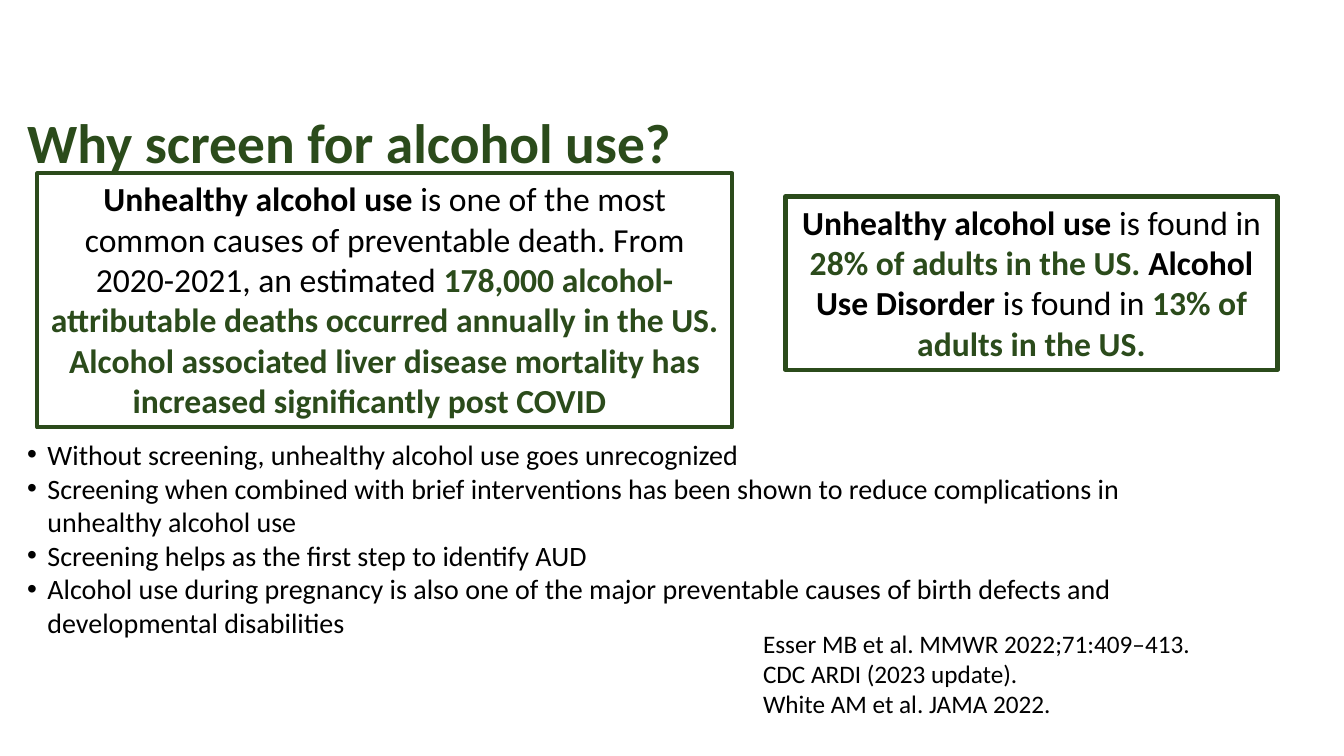
from lxml import etree
from pptx import Presentation
from pptx.dml.color import RGBColor
from pptx.enum.shapes import MSO_SHAPE
from pptx.enum.text import MSO_ANCHOR, MSO_AUTO_SIZE, PP_ALIGN
from pptx.oxml.ns import qn
from pptx.util import Emu, Pt

RECTANGLE = MSO_SHAPE.RECTANGLE
TOP, MIDDLE = MSO_ANCHOR.TOP, MSO_ANCHOR.MIDDLE
LEFT, CENTER = PP_ALIGN.LEFT, PP_ALIGN.CENTER
NO_AUTOFIT = MSO_AUTO_SIZE.NONE

EMU_PER_PX = 9144
FONT = "Calibri"
COLORS = {"green": "2B4B1B", "black": "000000"}
PLAIN = ("black", False)
STRONG = ("black", True)
ACCENT = ("green", True)


def px(length):
    return Emu(length * EMU_PER_PX)


def color(name):
    return RGBColor.from_string(COLORS[name])


class SlideBuilder:
    def __init__(self, presentation):
        self.slide = presentation.slides.add_slide(presentation.slide_layouts[1])

    def place(self, shape, box):
        shape.left, shape.top, shape.width, shape.height = map(px, box)

    def add_text(self, shape, paragraphs, size, align=LEFT, anchor=TOP, spacing=1.0, indent=0):
        frame = shape.text_frame
        frame.word_wrap = True
        frame.auto_size = NO_AUTOFIT
        frame.vertical_anchor = anchor
        for index, runs in enumerate(paragraphs):
            paragraph = frame.add_paragraph() if index else frame.paragraphs[0]
            if indent:
                self.add_bullet(paragraph, indent)
            paragraph.alignment = align
            paragraph.line_spacing = spacing
            paragraph.space_before = paragraph.space_after = Pt(0)
            for text, (color_name, bold) in runs:
                run = paragraph.add_run()
                run.text = text
                run.font.name = FONT
                run.font.size = Pt(size)
                run.font.bold = bold
                run.font.color.rgb = color(color_name)

    def add_bullet(self, paragraph, indent):
        properties = paragraph._p.get_or_add_pPr()
        properties.set("marL", str(px(indent)))
        properties.set("indent", str(px(-indent)))
        etree.SubElement(properties, qn("a:buFont")).set("typeface", "Arial")
        etree.SubElement(properties, qn("a:buChar")).set("char", "•")

    def title(self, box, text):
        shape = self.slide.shapes.title
        self.place(shape, box)
        self.add_text(shape, [[(text, ACCENT)]], 39.6, anchor=MIDDLE, spacing=0.9)

    def bullets(self, box, items):
        shape = self.slide.placeholders[1]
        self.place(shape, box)
        self.add_text(shape, [[(item, PLAIN)] for item in items], 20, indent=20)

    def callout(self, box, runs):
        shape = self.slide.shapes.add_shape(RECTANGLE, *map(px, box))
        shape.shadow.inherit = False
        shape.fill.background()
        shape.line.color.rgb = color("green")
        shape.line.width = Pt(3)
        self.add_text(shape, [runs], 24, align=CENTER)

    def references(self, box, lines):
        shape = self.slide.shapes.add_textbox(*map(px, box))
        self.add_text(shape, [[(line, PLAIN)] for line in lines], 18)


def main():
    presentation = Presentation()
    presentation.slide_width, presentation.slide_height = px(1333), px(750)
    builder = SlideBuilder(presentation)

    builder.title((17, 112, 1289, 65), "Why screen for alcohol use?")
    builder.bullets((17, 429, 1198, 246), [
        "Without screening, unhealthy alcohol use goes unrecognized",
        "Screening when combined with brief interventions has been shown to reduce "
        "complications in unhealthy alcohol use",
        "Screening helps as the first step to identify AUD",
        "Alcohol use during pregnancy is also one of the major preventable causes of "
        "birth defects and developmental disabilities",
    ])
    builder.callout((37, 172, 689, 252), [
        ("Unhealthy alcohol use ", STRONG),
        ("is one of the most common causes of preventable death. "
         "From 2020-2021, an estimated ", PLAIN),
        ("178,000 alcohol-attributable deaths occurred annually in the US. "
         "Alcohol associated liver disease mortality has increased significantly "
         "post COVID\t", ACCENT),
    ])
    builder.callout((779, 195, 488, 172), [
        ("Unhealthy alcohol use ", STRONG),
        ("is found in ", PLAIN),
        ("28% of adults in the US. ", ACCENT),
        ("Alcohol Use Disorder ", STRONG),
        ("is found in ", PLAIN),
        ("13% of adults in the US.", ACCENT),
    ])
    builder.references((747, 618, 586, 101), [
        "Esser MB et al. MMWR 2022;71:409–413.",
        "CDC ARDI (2023 update).",
        "White AM et al. JAMA 2022.",
    ])

    presentation.save("out.pptx")


if __name__ == "__main__":
    main()
